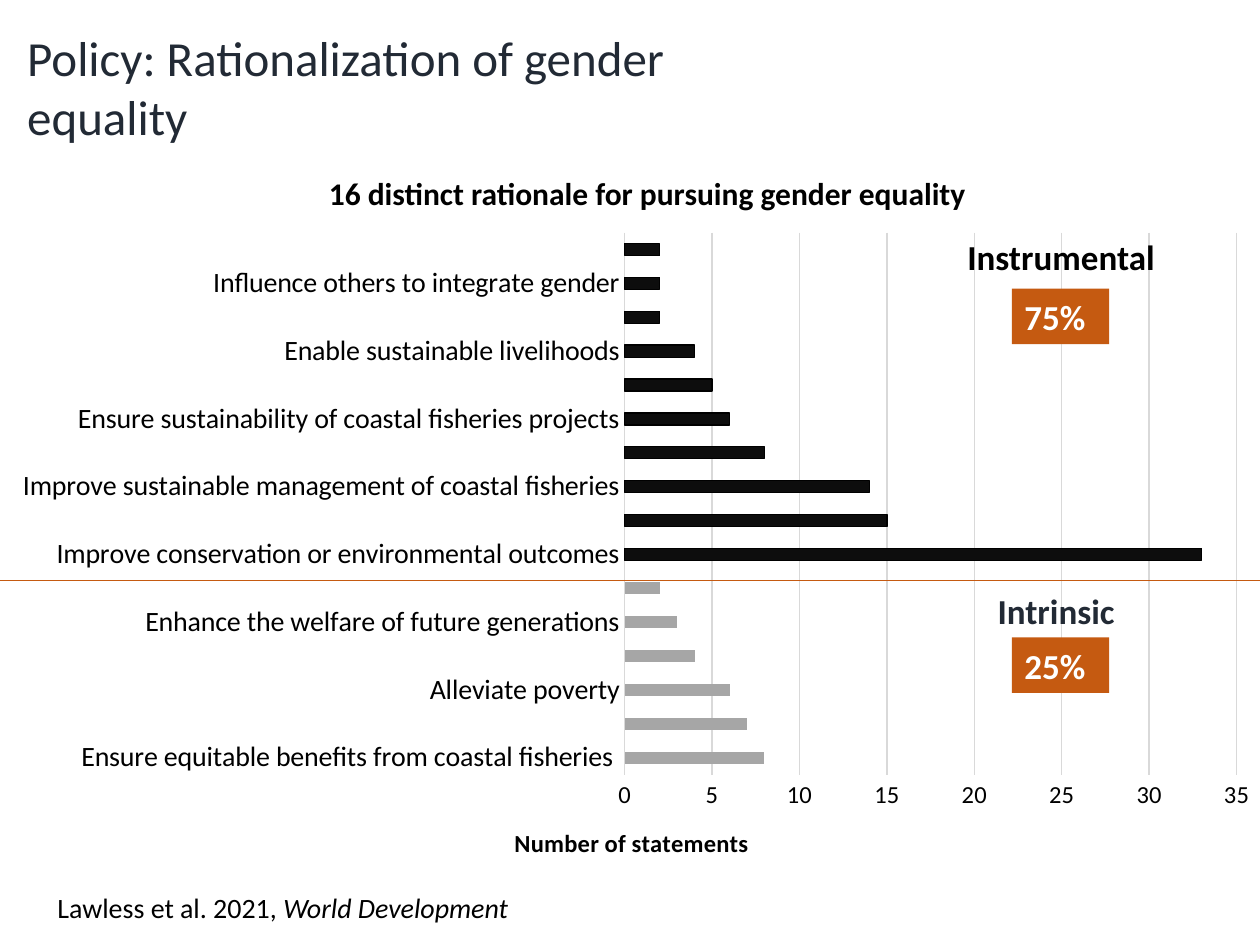
from lxml.etree import SubElement
from pptx import Presentation
from pptx.chart.data import CategoryChartData
from pptx.dml.color import RGBColor
from pptx.enum.chart import XL_CHART_TYPE, XL_TICK_MARK
from pptx.enum.shapes import MSO_CONNECTOR, MSO_SHAPE
from pptx.enum.text import PP_ALIGN
from pptx.oxml import parse_xml
from pptx.oxml.ns import nsdecls, qn
from pptx.util import Cm, Pt

BLACK = RGBColor(0x00, 0x00, 0x00)
WHITE = RGBColor(0xFF, 0xFF, 0xFF)
NAVY = RGBColor(0x22, 0x2A, 0x35)
ORANGE = RGBColor(0xC5, 0x5A, 0x11)
BAR_BLACK = RGBColor(0x0D, 0x0D, 0x0D)
BAR_GREY = RGBColor(0xA6, 0xA6, 0xA6)
GRID_GREY = RGBColor(0xD9, 0xD9, 0xD9)
FONT = "Calibri"

# Each label names the first bar of a pair; the second bar is unlabelled
INTRINSIC = [
    ("Ensure equitable benefits from coastal fisheries ", 8, 7),
    ("Alleviate poverty", 6, 4),
    ("Enhance the welfare of future generations", 3, 2),
]
INSTRUMENTAL = [
    ("Improve conservation or environmental outcomes", 33, 15),
    ("Improve sustainable management of coastal fisheries", 14, 8),
    ("Ensure sustainability of coastal fisheries projects", 6, 5),
    ("Enable sustainable livelihoods", 4, 2),
    ("Influence others to integrate gender", 2, 2),
]


def set_font(font, size, color=BLACK, **extra):
    fmt = {"name": FONT, "size": Pt(size), **extra}
    for name, value in fmt.items():
        setattr(font, name, value)
    font.color.rgb = color


def add_runs(sp, runs, size, color, **extra):
    tf = sp.text_frame
    tf.word_wrap = True
    p = tf.paragraphs[0]
    p.alignment = PP_ALIGN.LEFT
    for text, italic in runs:
        r = p.add_run()
        r.text = text
        set_font(r.font, size, color, italic=italic, **extra)


def add_text(s, box, runs, size, color=BLACK, **extra):
    sp = s.shapes.add_textbox(*map(Cm, box))
    add_runs(sp, runs, size, color, **extra)


def add_share(s, top, text):
    sp = s.shapes.add_shape(MSO_SHAPE.RECTANGLE, Cm(20.4), Cm(top), Cm(1.96), Cm(1.12))
    sp.shadow.inherit = False
    sp.fill.solid()
    sp.fill.fore_color.rgb = ORANGE
    sp.line.fill.background()
    add_runs(sp, [(text, False)], 20, WHITE, bold=True)


def add_divider(s, top):
    line = s.shapes.add_connector(MSO_CONNECTOR.STRAIGHT, Cm(0), Cm(top), Cm(25.4), Cm(top))
    line.line.color.rgb = ORANGE
    line.line.width = Pt(0.5)
    SubElement(line._element.spPr, qn("a:effectLst"))


def set_layout(parent, index, inner=False, **place):
    """Place a chart part by fractions of the chart area."""
    for old in parent.findall(qn("c:layout")):
        parent.remove(old)
    target = '<c:layoutTarget val="inner"/>' if inner else ""
    modes = '<c:xMode val="edge"/><c:yMode val="edge"/>'
    values = "".join(f'<c:{key} val="{value}"/>' for key, value in place.items())
    parent.insert(index, parse_xml(
        f'<c:layout {nsdecls("c")}><c:manualLayout>{target}{modes}{values}'
        "</c:manualLayout></c:layout>"))


def style_axes(chart):
    cat, val = chart.category_axis, chart.value_axis
    for axis, size in ((cat, 16), (val, 14)):
        axis.major_tick_mark = axis.minor_tick_mark = XL_TICK_MARK.NONE
        set_font(axis.tick_labels.font, size)
    for name, value in {"minimum_scale": 0, "maximum_scale": 35, "major_unit": 5}.items():
        setattr(val, name, value)
    val.format.line.fill.background()
    for line in (cat.format.line, val.major_gridlines.format.line):
        line.color.rgb = GRID_GREY
        line.width = Pt(0.75)

    # Axis title
    title = val.axis_title
    p = title.text_frame.paragraphs[0]
    r = p.add_run()
    r.text = "Number of statements"
    set_font(r.font, 14, bold=True)
    set_layout(title._element, 1, x=0.4, y=0.9)


def add_bar_chart(s):
    data = CategoryChartData()
    pairs = INTRINSIC + INSTRUMENTAL
    data.categories = [text for label, *_ in pairs for text in (label, "")]
    data.add_series("Series 1", [value for _, *values in pairs for value in values])
    chart = s.shapes.add_chart(XL_CHART_TYPE.BAR_CLUSTERED, Cm(0), Cm(4.42),
                               Cm(25.7), Cm(13.49), data).chart
    chart.has_legend = chart.has_title = False
    set_font(chart.font, 10)
    style_axes(chart)

    # Bars: black for instrumental, grey for intrinsic
    plot = chart.plots[0]
    plot.gap_width = 182
    plot.vary_by_categories = False
    series = plot.series[0]
    series.format.fill.solid()
    series.format.fill.fore_color.rgb = BAR_BLACK
    series.format.line.color.rgb = BLACK
    series.format.line.width = Pt(0.75)
    for i in range(2 * len(INTRINSIC)):
        fmt = series.points[i].format
        fmt.fill.solid()
        fmt.fill.fore_color.rgb = BAR_GREY
        fmt.line.fill.background()

    plot_area = chart._chartSpace.find(".//" + qn("c:plotArea"))
    set_layout(plot_area, 0, inner=True, x=0.49, y=0.02, w=0.48, h=0.81)


def main():
    prs = Presentation()
    prs.slide_width, prs.slide_height = Cm(25.4), Cm(19.05)
    s = prs.slides.add_slide(prs.slide_layouts[6])

    add_bar_chart(s)

    # Headings
    add_text(s, (0.3, 0.43, 14.1, 2.64),
             [("Policy: Rationalization of gender equality", False)], 28, NAVY)
    add_text(s, (6.38, 3.38, 16, 1.02),
             [("16 distinct rationale for pursuing gender equality", False)], 18, bold=True)

    # Groups and their shares
    add_text(s, (19.25, 4.62, 7.44, 0.94), [("Instrumental", False)], 20, bold=True)
    add_share(s, 5.82, "75%")
    add_text(s, (19.86, 11.76, 6.22, 1.07), [("Intrinsic", False)], 20, NAVY, bold=True)
    add_share(s, 12.85, "25%")
    add_divider(s, 11.71)

    # Source
    add_text(s, (0.91, 17.83, 11.96, 0.94),
             [("Lawless et al. 2021, ", False), ("World Development", True)], 16)

    prs.save("out.pptx")


if __name__ == "__main__":
    main()
